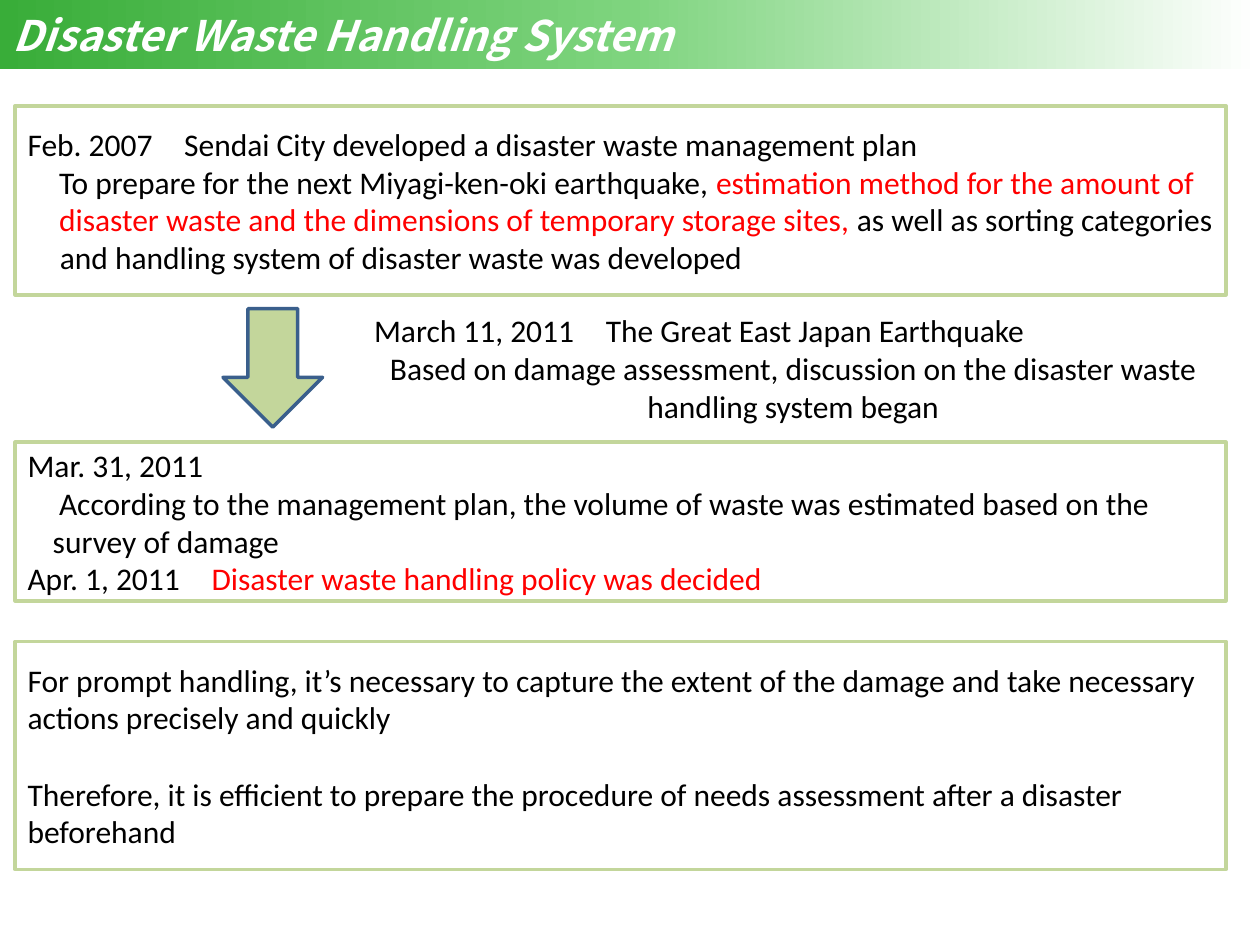
from dataclasses import dataclass

from pptx import Presentation
from pptx.dml.color import RGBColor as Rgb
from pptx.enum.shapes import MSO_SHAPE as Kind
from pptx.enum.text import MSO_ANCHOR as Anchor, MSO_AUTO_SIZE as Fit, PP_ALIGN as Align
from pptx.oxml import parse_xml
from pptx.oxml.ns import nsdecls
from pptx.shapes.autoshape import Shape
from pptx.slide import Slide
from pptx.util import Inches, Pt


@dataclass(frozen=True)
class Theme:
    font: str = "Calibri"
    head: str = "Noto Sans CJK JP"
    size: int = 18
    big: int = 24
    line: int = 2
    ink: str = "000000"
    red: str = "FF0000"
    white: str = "FFFFFF"
    green: str = "C3D69B"
    blue: str = "3A5F8C"
    fade: tuple[str, ...] = ("39AD39", "7ED47E", "FFFFFF")


@dataclass(frozen=True)
class Run:
    text: str
    hot: bool = False


@dataclass(frozen=True)
class Para:
    runs: tuple[Run, ...]
    hang: float = 0
    gap: float = 0
    align: Align = Align.LEFT


@dataclass(frozen=True)
class Box:
    left: float
    top: float
    width: float
    height: float
    edge: str
    paras: tuple[Para, ...] = ()
    fill: str = "FFFFFF"
    kind: Kind = Kind.RECTANGLE


THEME = Theme()
LEFT, WIDE, HANG = 0.12, 9.61, 0.2

PLAN = (
    Para((Run("Feb. 2007　Sendai City developed a disaster waste management plan"),)),
    Para((
        Run("　To prepare for the next Miyagi-ken-oki earthquake, "),
        Run("estimation method for the amount of", True),
    )),
    Para((
        Run("　"),
        Run("disaster waste and the dimensions of temporary storage sites, ", True),
        Run("as well as sorting categories  and handling system of disaster waste was developed"),
    ), HANG),
)
QUAKE = (
    Para((Run("March 11, 2011　The Great East Japan Earthquake"),)),
    Para((Run("Based on damage assessment, discussion on the disaster waste "
              "handling system began"),), align=Align.CENTER),
)
POLICY = (
    Para((Run("Mar. 31, 2011"),)),
    Para((Run("　According to the management plan, the volume of waste was estimated "
              "based on the survey of damage"),), HANG),
    Para((Run("Apr. 1, 2011　"), Run("Disaster waste handling policy was decided", True))),
)
LESSON = (
    Para((Run("For prompt handling, it’s necessary to capture the extent of the damage "
              "and take necessary actions precisely and quickly"),)),
    Para((Run("Therefore, it is efficient to prepare the procedure of needs assessment "
              "after a disaster beforehand"),), gap=22),
)
BOXES = (
    Box(LEFT, 0.84, WIDE, 1.5, THEME.green, PLAN),
    Box(1.77, 2.45, 0.79, 0.94, THEME.blue, fill=THEME.green, kind=Kind.DOWN_ARROW),
    Box(2.87, 2.41, 6.85, 1.02, THEME.white, QUAKE),
    Box(LEFT, 3.51, WIDE, 1.26, THEME.green, POLICY),
    Box(LEFT, 5.09, WIDE, 1.81, THEME.green, LESSON),
)


def write(shape: Shape, paras: tuple[Para, ...]) -> None:
    frame = shape.text_frame
    frame.word_wrap = True
    frame.vertical_anchor = Anchor.MIDDLE
    for i, para in enumerate(paras):
        p = frame.add_paragraph() if i else frame.paragraphs[0]
        p.alignment = para.align
        p.space_before = Pt(para.gap)
        p.font.name = THEME.font
        p.font.size = Pt(THEME.size)
        if para.hang:
            props = p._p.get_or_add_pPr()
            props.set("marL", str(Inches(para.hang)))
            props.set("indent", str(-Inches(para.hang)))
        for run in para.runs:
            r = p.add_run()
            r.text = run.text
            r.font.color.rgb = Rgb.from_string(THEME.red if run.hot else THEME.ink)


def draw(slide: Slide, box: Box) -> None:
    place = map(Inches, (box.left, box.top, box.width, box.height))
    shape = slide.shapes.add_shape(box.kind, *place)
    shape.shadow.inherit = False
    shape.fill.solid()
    shape.fill.fore_color.rgb = Rgb.from_string(box.fill)
    shape.line.color.rgb = Rgb.from_string(box.edge)
    shape.line.width = Pt(THEME.line)
    if box.paras:
        write(shape, box.paras)


def banner(slide: Slide, text: str) -> None:
    title = slide.shapes.title
    title.left, title.top, title.width, title.height = map(Inches, (0, 0, 10, 0.55))
    title.fill.gradient()
    title.fill.gradient_angle = 0
    stops = title._element.spPr.find(".//{*}gsLst")
    for stop in list(stops):
        stops.remove(stop)
    for i, tone in enumerate(THEME.fade):
        stops.append(parse_xml(
            f'<a:gs {nsdecls("a")} pos="{i * 50000}"><a:srgbClr val="{tone}"/></a:gs>'))
    frame = title.text_frame
    frame.auto_size = Fit.NONE
    frame.vertical_anchor = Anchor.MIDDLE
    frame.text = text
    p = frame.paragraphs[0]
    p.alignment = Align.LEFT
    p.font.name = THEME.head
    p.font.size = Pt(THEME.big)
    p.font.bold = p.font.italic = True
    p.font.color.rgb = Rgb.from_string(THEME.white)


def main() -> None:
    deck = Presentation()
    deck.slide_width, deck.slide_height = Inches(10), Inches(7.5)
    slide = deck.slides.add_slide(deck.slide_layouts[5])
    banner(slide, "Disaster Waste Handling System")
    for box in BOXES:
        draw(slide, box)
    deck.save("out.pptx")


if __name__ == "__main__":
    main()
